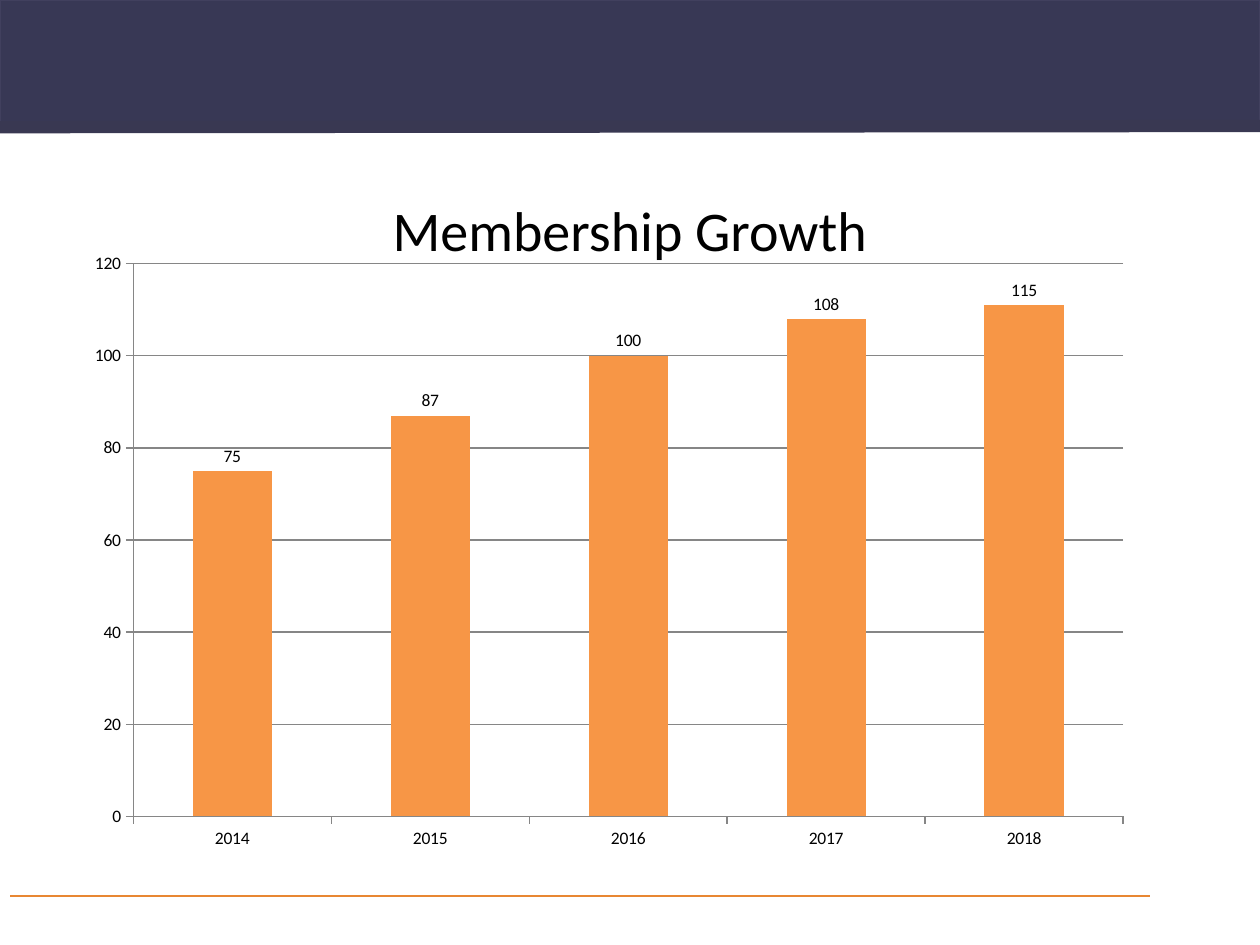
import pptx
import pptx.chart.data
import pptx.dml.color
import pptx.enum.chart
import pptx.enum.shapes
import pptx.enum.text
import pptx.oxml
import pptx.util

Pt = pptx.util.Pt
FONT = "Calibri"
BLACK = "000000"
GRAY = "868686"
ORANGE = "F79646"
MEMBERS = {"2014": 75, "2015": 87, "2016": 100, "2017": 108, "2018": 111}


def color(hex_string):
    """Return an RGB colour for a hex string."""
    return pptx.dml.color.RGBColor.from_string(hex_string)


def format_font(font, size):
    """Apply the slide's typeface and text colour."""
    font.name = FONT
    font.size = Pt(size)
    font.bold = False
    font.color.rgb = color(BLACK)


def format_line(line, hex_string, width):
    """Set the colour and width of a line."""
    line.color.rgb = color(hex_string)
    line.width = Pt(width)


def add_rule(slide, start, end, hex_string, width):
    """Add a straight line without a shadow."""
    rule = slide.shapes.add_connector(
        pptx.enum.shapes.MSO_CONNECTOR.STRAIGHT, *map(Pt, start + end)
    )
    format_line(rule.line, hex_string, width)
    rule.element.spPr.append(
        pptx.oxml.parse_xml(
            '<a:effectLst xmlns:a="http://schemas.openxmlformats.org/drawingml/2006/main"/>'
        )
    )


def add_header_band(slide):
    """Add the dark band across the top of the slide."""
    band = slide.shapes.add_shape(
        pptx.enum.shapes.MSO_SHAPE.RECTANGLE, 0, 0, Pt(720), Pt(72)
    )
    band.shadow.inherit = False
    band.fill.solid()
    band.fill.fore_color.rgb = color("383855")
    format_line(band.line, "41405E", 0.75)
    add_rule(slide, (0, 72.7), (720, 72), "393852", 7)


def format_axis(axis, has_gridlines):
    """Style an axis with outside ticks and gray lines."""
    axis.major_tick_mark = pptx.enum.chart.XL_TICK_MARK.OUTSIDE
    axis.minor_tick_mark = pptx.enum.chart.XL_TICK_MARK.NONE
    axis.has_major_gridlines = has_gridlines
    format_line(axis.format.line, GRAY, 0.75)
    if has_gridlines:
        format_line(axis.major_gridlines.format.line, GRAY, 0.75)


def add_member_chart(slide):
    """Add the column chart of members by year."""
    chart_data = pptx.chart.data.CategoryChartData()
    chart_data.categories = list(MEMBERS)
    chart_data.add_series("Series 1", list(MEMBERS.values()))
    chart = slide.shapes.add_chart(
        pptx.enum.chart.XL_CHART_TYPE.COLUMN_CLUSTERED,
        Pt(42), Pt(138), Pt(612), Pt(354), chart_data,
    ).chart
    chart.has_title = False
    chart.has_legend = False
    format_font(chart.font, 10)
    format_axis(chart.category_axis, False)
    format_axis(chart.value_axis, True)
    chart.value_axis.minimum_scale = 0
    chart.value_axis.maximum_scale = 120
    chart.value_axis.major_unit = 20

    plot = chart.plots[0]
    plot.gap_width = 150
    plot.vary_by_categories = False
    series = plot.series[0]
    series.format.fill.solid()
    series.format.fill.fore_color.rgb = color(ORANGE)
    outside_end = pptx.enum.chart.XL_LABEL_POSITION.OUTSIDE_END
    labels = series.data_labels
    labels.show_value = True
    labels.position = outside_end
    format_font(labels.font, 10)
    last_label = series.points[len(MEMBERS) - 1].data_label
    last_label.text_frame.text = "115"
    format_font(last_label.text_frame.paragraphs[0].runs[0].font, 10)
    last_label.position = outside_end


def format_title(slide, text):
    """Place and style the title in front of the chart."""
    title = slide.shapes.title
    title.left, title.top, title.width, title.height = map(Pt, (0, 108, 720, 46))
    title.text_frame.text = text
    title.text_frame.vertical_anchor = pptx.enum.text.MSO_ANCHOR.TOP
    title.text_frame.auto_size = pptx.enum.text.MSO_AUTO_SIZE.SHAPE_TO_FIT_TEXT
    paragraph = title.text_frame.paragraphs[0]
    paragraph.alignment = pptx.enum.text.PP_ALIGN.CENTER
    format_font(paragraph.runs[0].font, 32)
    title.element.getparent().append(title.element)


def main():
    """Build and save the membership slide."""
    presentation = pptx.Presentation()
    presentation.slide_width = Pt(720)
    presentation.slide_height = Pt(540)
    slide = presentation.slides.add_slide(presentation.slide_layouts[5])
    add_rule(slide, (6, 512), (657, 512), "E88733", 0.75)
    add_header_band(slide)
    add_member_chart(slide)
    format_title(slide, "Membership Growth")
    presentation.save("out.pptx")


if __name__ == "__main__":
    main()
